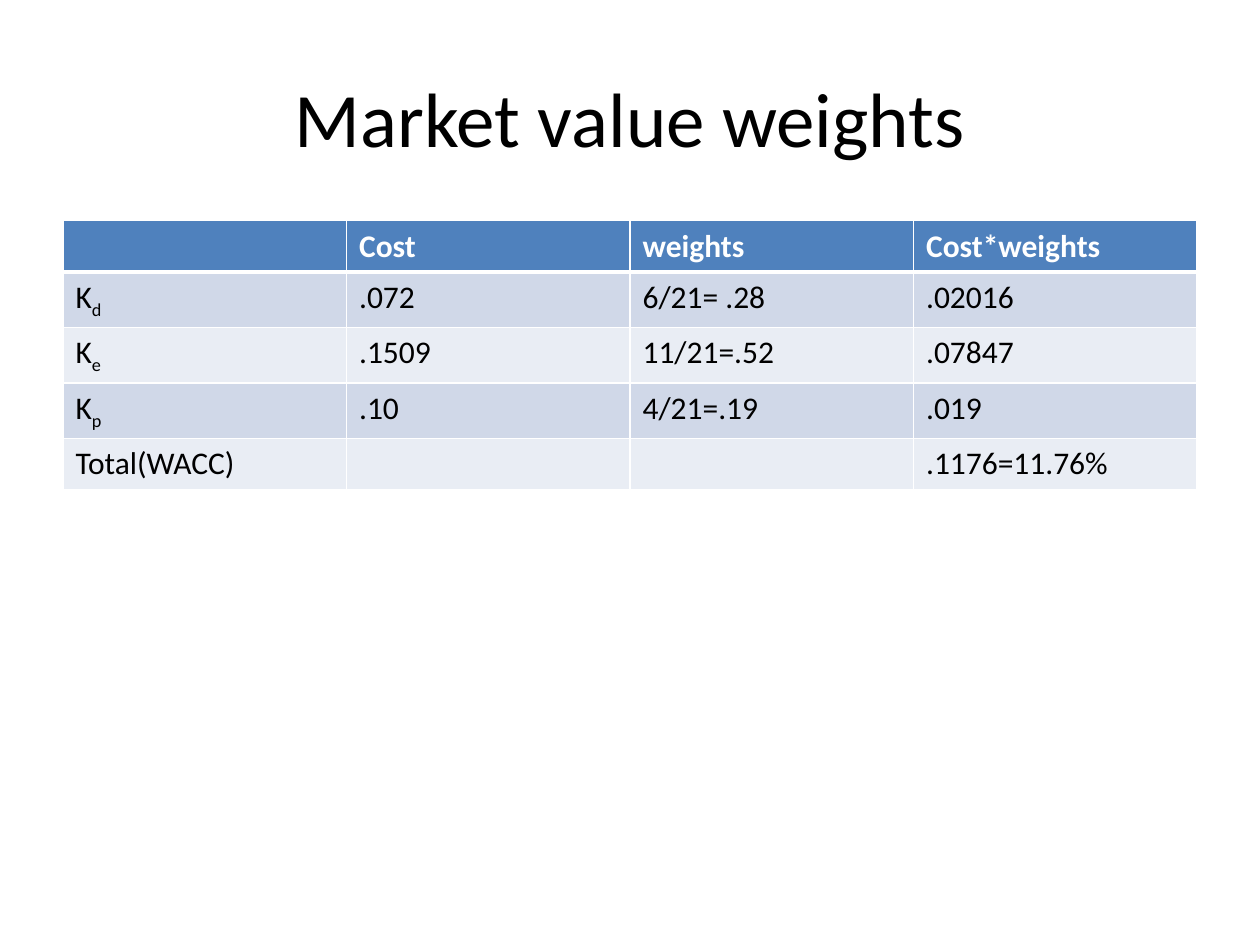
from lxml.etree import SubElement
from pptx import Presentation
from pptx.dml.color import RGBColor
from pptx.enum.text import MSO_ANCHOR, PP_ALIGN
from pptx.oxml.ns import qn
from pptx.util import Cm, Pt

BLACK = RGBColor(0x00, 0x00, 0x00)
WHITE = RGBColor(0xFF, 0xFF, 0xFF)
HEADER_BLUE = RGBColor(0x4F, 0x81, 0xBD)
BAND_DARK = RGBColor(0xD0, 0xD8, 0xE8)
BAND_LIGHT = RGBColor(0xE9, 0xED, 0xF4)

# A tuple holds a symbol and its subscript
WEIGHTS = [
    ["", "Cost", "weights", "Cost*weights"],
    [("K", "d"), ".072", "6/21= .28", ".02016"],
    [("K", "e"), ".1509", "11/21=.52", ".07847"],
    [("K", "p"), ".10", "4/21=.19", ".019"],
    ["Total(WACC)", "", "", ".1176=11.76%"],
]


class SlideBuilder:
    font_name = "Calibri"
    title_size = Pt(44)
    body_size = Pt(18)
    thin, thick = Pt(1), Pt(3)

    def __init__(self, slide):
        self.slide = slide

    def style(self, paragraph, size, color, bold=False):
        font = paragraph.font
        font.name, font.size, font.bold = self.font_name, size, bold
        font.color.rgb = color

    def title(self, text, left, top, width, height):
        frame = self.slide.shapes.add_textbox(left, top, width, height).text_frame
        frame.word_wrap = True
        frame.vertical_anchor = MSO_ANCHOR.MIDDLE
        heading = frame.paragraphs[0]
        heading.text = text
        heading.alignment = PP_ALIGN.CENTER
        self.style(heading, self.title_size, BLACK)

    def border(self, cell, side, width):
        line = SubElement(cell._tc.get_or_add_tcPr(), qn(f"a:ln{side}"), w=str(width))
        fill = SubElement(line, qn("a:solidFill"))
        SubElement(fill, qn("a:srgbClr"), val=str(WHITE))

    def cell(self, cell, content, row):
        # Borders, with a thick rule under the header
        widths = {"L": self.thin, "R": self.thin,
                  "T": self.thick if row == 1 else self.thin,
                  "B": self.thick if row == 0 else self.thin}
        for side, width in widths.items():
            self.border(cell, side, width)

        # Fill, banded below the header
        cell.fill.solid()
        band = BAND_DARK if row % 2 else BAND_LIGHT
        cell.fill.fore_color.rgb = band if row else HEADER_BLUE

        # Text
        paragraph = cell.text_frame.paragraphs[0]
        self.style(paragraph, self.body_size, BLACK if row else WHITE, bold=row == 0)
        if isinstance(content, tuple):
            symbol, subscript = content
            paragraph.add_run().text = symbol
            index = paragraph.add_run()
            index.text = subscript
            index.font._element.set("baseline", "-25000")
        elif content:
            paragraph.add_run().text = content

    def table(self, rows, left, top, width, row_height):
        table = self.slide.shapes.add_table(
            len(rows), len(rows[0]), left, top, width, row_height * len(rows)).table
        for row, contents in enumerate(rows):
            for column, content in enumerate(contents):
                self.cell(table.cell(row, column), content, row)


def main():
    presentation = Presentation()
    presentation.slide_width, presentation.slide_height = Cm(25.4), Cm(19.05)
    builder = SlideBuilder(presentation.slides.add_slide(presentation.slide_layouts[6]))

    # Heading
    builder.title("Market value weights", Cm(1.27), Cm(0.76), Cm(22.86), Cm(3.18))

    # Cost of capital by source
    builder.table(WEIGHTS, Cm(1.27), Cm(4.45), Cm(22.86), Cm(1.03))

    presentation.save("out.pptx")


if __name__ == "__main__":
    main()
